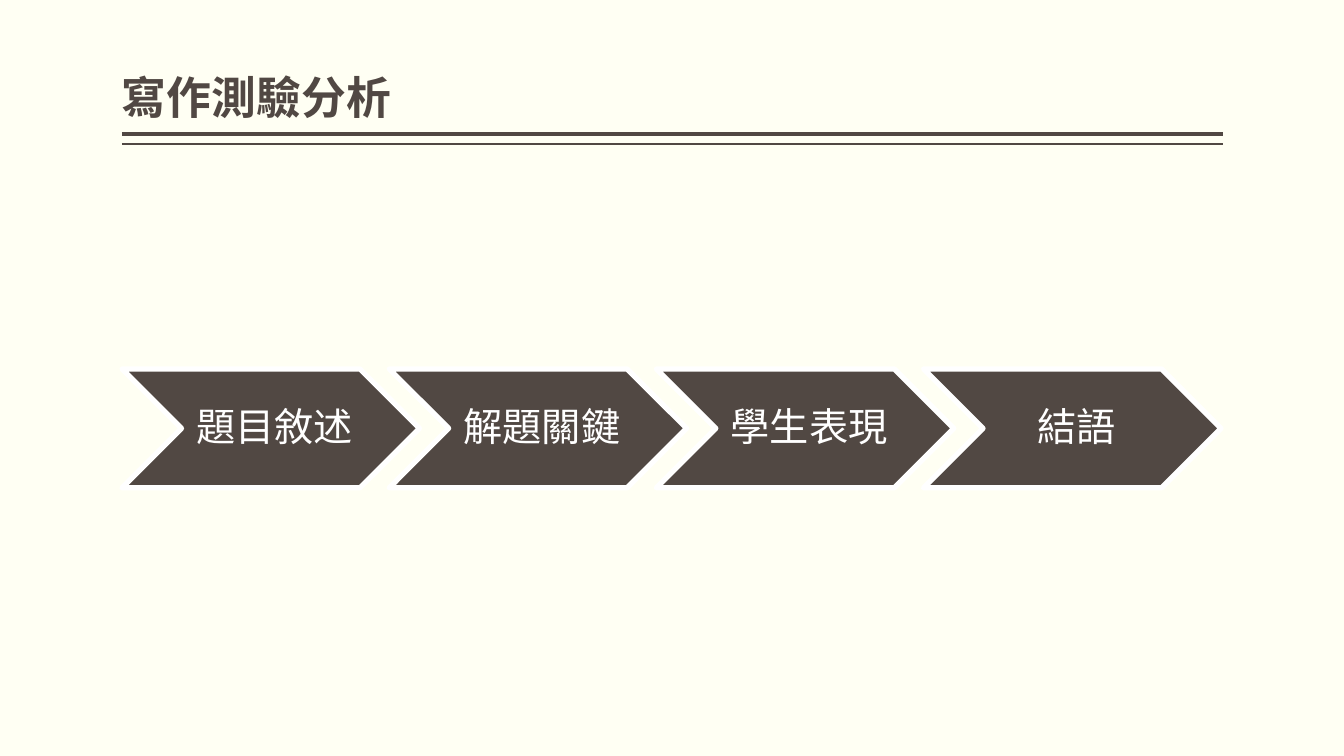
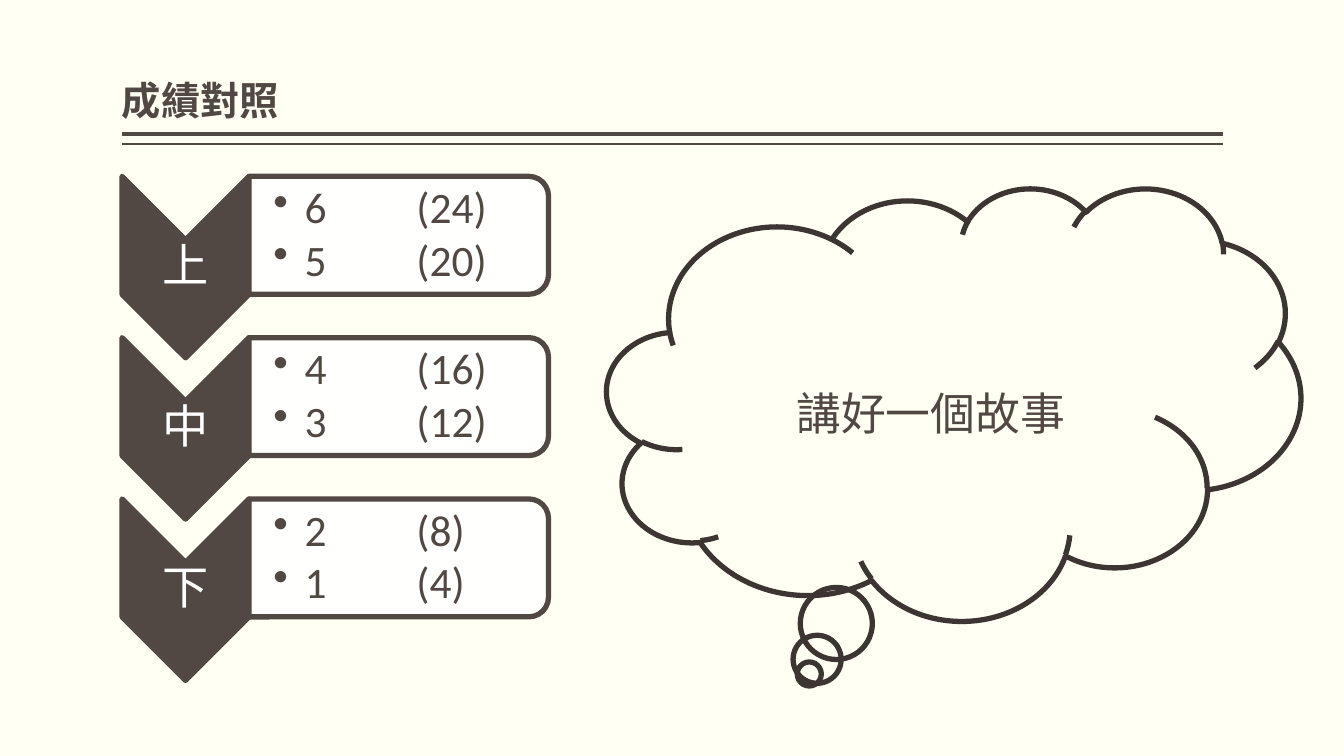
from lxml.etree import SubElement
from pptx import Presentation
from pptx.dml.color import RGBColor
from pptx.enum.shapes import MSO_CONNECTOR, MSO_SHAPE
from pptx.enum.text import MSO_ANCHOR, PP_ALIGN
from pptx.oxml.ns import qn
from pptx.util import Inches, Pt

BROWN, DARK, WHITE, CREAM = "514843", "3C3532", "FFFFFF", "FFFFF3"
TITLE_FONT, CJK_FONT, LATIN_FONT = "Noto Sans CJK TC", "Noto Sans CJK SC", "Calibri"
BORDER = 3.78


def rgb(value):
    """Return the colour for a hex string."""
    return RGBColor.from_string(value)


class Deck:
    """Hold the shared style and the current slide."""

    def __init__(self):
        """Set the slide size and the background."""
        self.prs = Presentation()
        self.prs.slide_width, self.prs.slide_height = Inches(13.33), Inches(7.5)
        fill = self.prs.slide_master.background.fill
        fill.solid()
        fill.fore_color.rgb = rgb(CREAM)

    def slide(self, title, size):
        """Start a slide with its title and double rule."""
        self.s = self.prs.slides.add_slide(self.prs.slide_layouts[5])
        self.rule(1.33, 3)
        self.rule(1.43, 1)
        sp = self.s.shapes.title
        sp.left, sp.top, sp.width, sp.height = map(Inches, (1.21, 0.08, 10.92, 1.2))
        tf = self.frame(sp, (0, 0.05, 0, 0.05), MSO_ANCHOR.BOTTOM)
        self.para(tf.paragraphs[0], title, size, TITLE_FONT, BROWN, bold=True)

    def rule(self, y, width):
        """Draw a horizontal rule under the title."""
        line = self.s.shapes.add_connector(
            MSO_CONNECTOR.STRAIGHT, Inches(1.21), Inches(y), Inches(12.13), Inches(y))
        line.line.color.rgb = rgb(BROWN)
        line.line.width = Pt(width)
        SubElement(line._element.spPr, qn("a:effectLst"))

    def shape(self, kind, x, y, w, h, fill, line, rotation=0, alpha=None):
        """Draw a preset shape with a border."""
        sp = self.s.shapes.add_shape(kind, *map(Inches, (x, y, w, h)))
        sp.shadow.inherit = False
        sp.rotation = rotation
        sp.line.color.rgb = rgb(line)
        sp.line.width = Pt(BORDER)
        if fill:
            sp.fill.solid()
            sp.fill.fore_color.rgb = rgb(fill)
        else:
            sp.fill.background()
        if alpha:
            color = sp._element.spPr.find(qn("a:solidFill"))[0]
            SubElement(color, qn("a:alpha"), val=str(alpha * 1000))
        return sp

    def box(self, x, y, w, h, insets, anchor=MSO_ANCHOR.MIDDLE):
        """Add a text box and return its text frame."""
        sp = self.s.shapes.add_textbox(*map(Inches, (x, y, w, h)))
        return self.frame(sp, insets, anchor)

    def frame(self, sp, insets, anchor=MSO_ANCHOR.MIDDLE):
        """Set insets, wrapping and anchor of a text frame."""
        tf = sp.text_frame
        tf.margin_left, tf.margin_top, tf.margin_right, tf.margin_bottom = map(Inches, insets)
        tf.word_wrap = True
        tf.vertical_anchor = anchor
        return tf

    def para(self, p, text, size, font, color, align=PP_ALIGN.LEFT, spacing=0.9, bold=False):
        """Fill a paragraph with one styled run."""
        p.alignment = align
        p.line_spacing = spacing
        r = p.add_run()
        r.text = text
        r.font.size, r.font.name, r.font.bold = Pt(size), font, bold
        r.font.color.rgb = rgb(color)
        SubElement(r._r.get_or_add_rPr(), qn("a:ea"), typeface=font)

    def bullets(self, tf, rows, size):
        """Write bulleted rows whose second column sits on a tab stop."""
        for i, row in enumerate(rows):
            p = tf.add_paragraph() if i else tf.paragraphs[0]
            self.para(p, "\t".join(row), size, LATIN_FONT, BROWN)
            p.space_after = Pt(4)
            pPr = p._p.get_or_add_pPr()
            pPr.set("marL", str(Inches(0.31)))
            pPr.set("indent", str(Inches(-0.31)))
            SubElement(pPr, qn("a:buChar"), char="•")
            tabs = SubElement(pPr, qn("a:tabLst"))
            SubElement(tabs, qn("a:tab"), pos=str(Inches(1.42)), algn="l")

    def step(self, x, text):
        """Draw one chevron of the process."""
        sp = self.shape(MSO_SHAPE.CHEVRON, x, 3.66, 2.95, 1.18, BROWN, WHITE)
        tf = self.frame(sp, (0.12, 0.04, 0.04, 0.04))
        self.para(tf.paragraphs[0], text, 28, CJK_FONT, WHITE, PP_ALIGN.CENTER)

    def level(self, y, name, rows):
        """Draw one level: a downward chevron and a panel of scores."""
        self.shape(MSO_SHAPE.CHEVRON, 0.94, y + 0.27, 1.8, 1.26, BROWN, BROWN, 90)
        tf = self.box(1.21, y + 0.63, 1.26, 0.54, (0.02,) * 4)
        self.para(tf.paragraphs[0], name, 33, LATIN_FONT, WHITE, PP_ALIGN.CENTER)
        self.shape(MSO_SHAPE.ROUND_2_SAME_RECTANGLE, 3.37, y - 0.9, 1.17, 2.97,
                   WHITE, BROWN, 90, alpha=90)
        tf = self.box(2.47, y + 0.06, 2.92, 1.06, (0.24, 0.02, 0.02, 0.02))
        self.bullets(tf, rows, 31)

    def thought(self, text):
        """Draw the thought cloud with its text."""
        self.shape(MSO_SHAPE.CLOUD_CALLOUT, 6.02, 1.86, 6.88, 4.29, None, DARK)
        tf = self.box(7.8, 3.78, 4.01, 0.94, (0.1, 0.05, 0.1, 0.05), MSO_ANCHOR.TOP)
        self.para(tf.paragraphs[0], text, 32, CJK_FONT, BROWN, spacing=1.0)


def main():
    """Build both slides and save the file."""
    deck = Deck()
    deck.slide("寫作測驗分析", 32)
    for i, text in enumerate(("題目敘述", "解題關鍵", "學生表現", "結語")):
        deck.step(1.21 + 2.65 * i, text)

    deck.slide("成績對照", 28)
    levels = (
        ("上", (("6", "(24)"), ("5", "(20)"))),
        ("中", (("4", "(16)"), ("3", "(12)"))),
        ("下", (("2", "(8)"), ("1", "(4)"))),
    )
    for i, (name, rows) in enumerate(levels):
        deck.level(1.75 + 1.6 * i, name, rows)
    deck.thought("講好一個故事")
    deck.prs.save("out.pptx")


if __name__ == "__main__":
    main()
